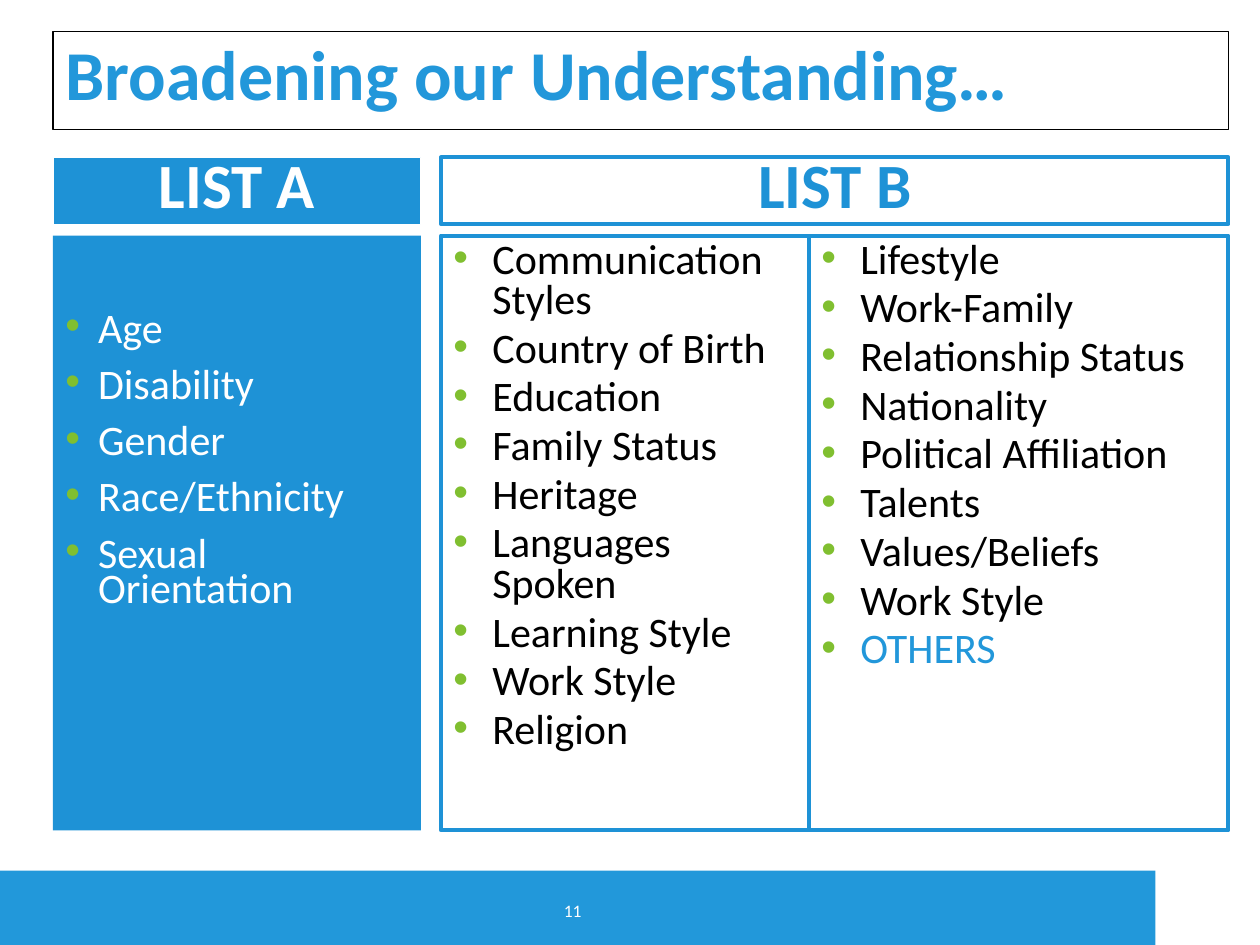
from lxml.etree import SubElement
from pptx import Presentation
from pptx.dml.color import RGBColor
from pptx.enum.shapes import MSO_SHAPE
from pptx.enum.text import MSO_ANCHOR, PP_ALIGN
from pptx.oxml.ns import qn
from pptx.util import Inches, Pt

SKY, BLUE, GREEN, WHITE, BLACK = "2297DA", "1E92D6", "80BF30", "FFFFFF", "000000"


def rgb(value):
    return RGBColor.from_string(value)


def add_box(box, fill, line, paragraphs, size, color, spacing=0.8, before=0,
            indent=0, bold=False, align=PP_ALIGN.LEFT, anchor=MSO_ANCHOR.MIDDLE,
            top_inset=0.05):
    """Add a rectangle with text; an indent above zero makes a bulleted list."""
    sp = s.shapes.add_shape(MSO_SHAPE.RECTANGLE, *[Inches(v) for v in box])
    sp.shadow.inherit = False
    if fill:
        sp.fill.solid()
        sp.fill.fore_color.rgb = rgb(fill)
    else:
        sp.fill.background()
    if line:
        sp.line.color.rgb = rgb(line[0])
        sp.line.width = Pt(line[1])
    else:
        sp.line.fill.background()
    tf = sp.text_frame
    frame_format = {"word_wrap": True, "vertical_anchor": anchor,
                    "margin_top": Inches(top_inset)}
    for name, value in frame_format.items():
        setattr(tf, name, value)
    for i, text in enumerate(paragraphs):
        p = tf.paragraphs[0] if i == 0 else tf.add_paragraph()
        p.text = text
        p.alignment = align
        p.line_spacing = spacing
        p.space_before = Pt(before if i else 0)
        if indent:
            pPr = p._p.get_or_add_pPr()
            pPr.set("marL", str(Inches(indent)))
            pPr.set("indent", str(-Inches(indent)))
            bullet_color = SubElement(pPr, qn("a:buClr"))
            SubElement(bullet_color, qn("a:srgbClr"), val=GREEN)
            SubElement(pPr, qn("a:buFont"), typeface="Arial")
            SubElement(pPr, qn("a:buChar"), char="•")
        font_format = {"name": "Calibri", "size": Pt(size), "bold": bold}
        for r in p.runs:
            for name, value in font_format.items():
                setattr(r.font, name, value)
            r.font.color.rgb = rgb(color)
    return sp


prs = Presentation()
prs.slide_width, prs.slide_height = Inches(10), Inches(7.5)
s = prs.slides.add_slide(prs.slide_layouts[6])

# Footer band and page number
band = s.shapes.add_shape(MSO_SHAPE.RECTANGLE, Inches(0), Inches(6.91),
                          Inches(9.17), Inches(0.59))
band.shadow.inherit = False
band.fill.solid()
band.fill.fore_color.rgb = rgb("2298DA")
band.line.fill.background()

number = s.shapes.add_textbox(Inches(4.17), Inches(7.09), Inches(0.75), Inches(0.25))
number.text_frame.word_wrap = True
p = number.text_frame.paragraphs[0]
p.alignment = PP_ALIGN.CENTER
r = p.add_run()
r.text = "11"
r.font.name, r.font.size = "Calibri", Pt(10)
r.font.color.rgb = rgb(WHITE)

# Title and list headings
LEFT_A, LEFT_B, LEFT_B2, RIGHT = 0.42, 3.5, 6.42, 9.75
COLUMN = 2.92
HEAD_TOP, HEAD_HEIGHT = 1.25, 0.53
LIST_TOP, LIST_HEIGHT = 1.87, 4.72

add_box((LEFT_A, 0.25, RIGHT - LEFT_A, 0.78), WHITE, (BLACK, 0.75),
        ["Broadening our Understanding…"], 40, SKY, bold=True)
headings = [
    ("LIST A", LEFT_A, COLUMN, BLUE, (WHITE, 0.75), WHITE),
    ("LIST B", LEFT_B, RIGHT - LEFT_B, WHITE, (BLUE, 2.25), BLUE),
]
for text, left, width, fill, line, color in headings:
    add_box((left, HEAD_TOP, width, HEAD_HEIGHT), fill, line, [text], 36, color,
            bold=True, align=PP_ALIGN.CENTER)

# Lists
list_a = ["Age", "Disability", "Gender", "Race/Ethnicity", "Sexual\vOrientation"]
add_box((LEFT_A, LIST_TOP, COLUMN, LIST_HEIGHT), BLUE, None, list_a, 24, WHITE,
        spacing=0.7, before=12, indent=0.26, anchor=MSO_ANCHOR.TOP, top_inset=0.63)

list_b = [
    (LEFT_B, COLUMN, ["Communication Styles", "Country of Birth", "Education",
                      "Family Status", "Heritage", "Languages Spoken",
                      "Learning Style", "Work Style", "Religion"]),
    (LEFT_B2, RIGHT - LEFT_B2, ["Lifestyle", "Work-Family", "Relationship Status",
                                "Nationality", "Political Affiliation", "Talents",
                                "Values/Beliefs", "Work Style", "OTHERS"]),
]
for left, width, items in list_b:
    sp = add_box((left, LIST_TOP, width, LIST_HEIGHT), None, (BLUE, 2.25), items,
                 24, BLACK, before=4.8, indent=0.31, anchor=MSO_ANCHOR.TOP)
others = sp.text_frame.paragraphs[-1].runs[0]
others.font.color.rgb = rgb(SKY)

prs.save("out.pptx")
